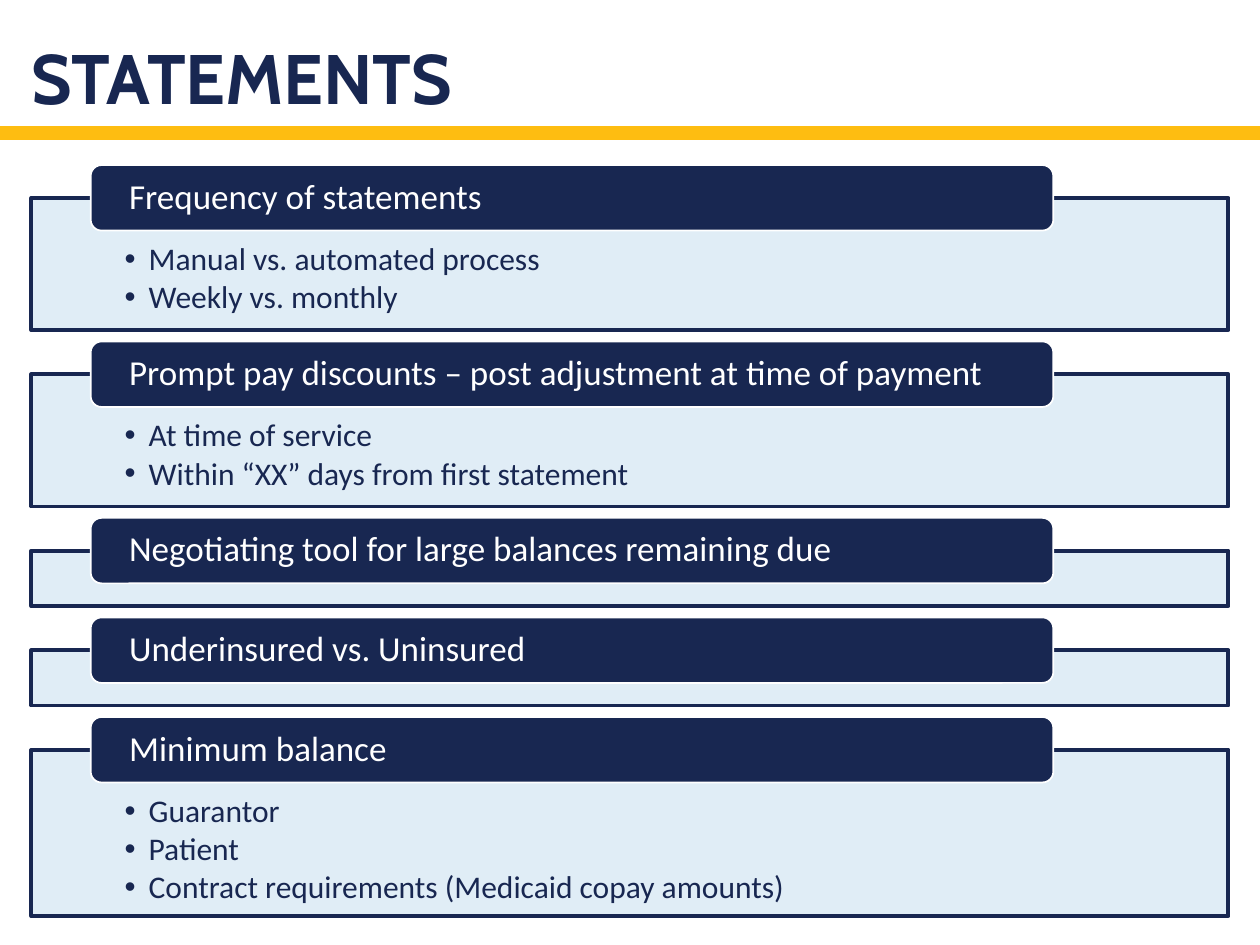
from dataclasses import dataclass

from lxml import etree
from pptx import Presentation
from pptx.dml.color import RGBColor
from pptx.enum.shapes import MSO_SHAPE
from pptx.enum.text import MSO_ANCHOR, PP_ALIGN
from pptx.oxml.ns import qn
from pptx.util import Inches, Pt

RECT = MSO_SHAPE.RECTANGLE
ROUNDED = MSO_SHAPE.ROUNDED_RECTANGLE
TOP, MIDDLE, BOTTOM = MSO_ANCHOR.TOP, MSO_ANCHOR.MIDDLE, MSO_ANCHOR.BOTTOM
LEFT = PP_ALIGN.LEFT

COLORS = {"navy": "182751", "gold": "FEBD11", "pale": "DDECF6", "white": "FFFFFF"}

MARGIN, WIDTH = 0.25, 9.5
FIRST_TOP, GAP = 1.57, 0.35
HEADER_RISE = 0.26


@dataclass
class Section:
    heading: str
    height: float
    bullets: tuple[str, ...] = ()


SECTIONS = [
    Section("Frequency of statements", 1.05,
            ("Manual vs. automated process", "Weekly vs. monthly")),
    Section("Prompt pay discounts – post adjustment at time of payment", 1.05,
            ("At time of service", "Within “XX” days from first statement")),
    Section("Negotiating tool for large balances remaining due", 0.44),
    Section("Underinsured vs. Uninsured", 0.44),
    Section("Minimum balance", 1.32,
            ("Guarantor", "Patient", "Contract requirements (Medicaid copay amounts)")),
]


def rgb(name: str) -> RGBColor:
    return RGBColor.from_string(COLORS[name])


def add_box(slide, kind, box: tuple, fill: str, line: str | None = None, width: float = 0):
    sp = slide.shapes.add_shape(kind, *map(Inches, box))
    sp.shadow.inherit = False
    sp.fill.solid()
    sp.fill.fore_color.rgb = rgb(fill)
    if line:
        sp.line.color.rgb = rgb(line)
        sp.line.width = Pt(width)
    else:
        sp.line.fill.background()
    return sp


def set_transparency(sp, opacity: int) -> None:
    color = sp.fill._xPr.find(qn("a:solidFill"))[0]
    etree.SubElement(color, qn("a:alpha"), val=str(opacity * 1000))


def add_bullet(p, indent: float) -> None:
    p_pr = p._p.get_or_add_pPr()
    p_pr.set("marL", str(Inches(indent)))
    p_pr.set("indent", str(-Inches(indent)))
    etree.SubElement(p_pr, qn("a:buFont"), typeface="Arial")
    etree.SubElement(p_pr, qn("a:buChar"), char="•")


def write(sp, lines: tuple[str, ...], insets: tuple, anchor, size: int, color: str,
          font: str = "Calibri", bold: bool = False, after: float = 0,
          bulleted: bool = False) -> None:
    tf = sp.text_frame
    tf.word_wrap = True
    tf.vertical_anchor = anchor
    tf.margin_left, tf.margin_top, tf.margin_right, tf.margin_bottom = map(Inches, insets)
    tf.text = "\n".join(lines)
    for p in tf.paragraphs:
        p.alignment = LEFT
        p.line_spacing = 0.9
        p.space_after = Pt(after)
        p.font.name = font
        p.font.size = Pt(size)
        p.font.bold = bold
        p.font.color.rgb = rgb(color)
        if bulleted:
            add_bullet(p, 0.19)


def add_section(slide, section: Section, top: float) -> None:
    body = add_box(slide, RECT, (MARGIN, top, WIDTH, section.height), "pale", "navy", 2.25)
    set_transparency(body, 90)
    if section.bullets:
        write(body, section.bullets, (0.74, 0.36, 0.74, 0.14), TOP, 18, "navy",
              after=2.4, bulleted=True)
    header = add_box(slide, ROUNDED, (0.72, top - HEADER_RISE, 7.64, 0.52),
                     "navy", "white", 1)
    write(header, (section.heading,), (0.28, 0, 0.28, 0), MIDDLE, 20, "white")


def main() -> None:
    prs = Presentation()
    prs.slide_width, prs.slide_height = Inches(10), Inches(7.5)
    slide = prs.slides.add_slide(prs.slide_layouts[6])

    add_box(slide, RECT, (0, 1, 10, 0.11), "gold")
    title = slide.shapes.add_textbox(Inches(MARGIN), 0, Inches(WIDTH), Inches(1))
    write(title, ("STATEMENTS",), (0, 0.05, 0, 0.05), BOTTOM, 40, "navy",
          font="Cabin", bold=True)

    top = FIRST_TOP
    for section in SECTIONS:
        add_section(slide, section, top)
        top += section.height + GAP

    prs.save("out.pptx")


if __name__ == "__main__":
    main()
